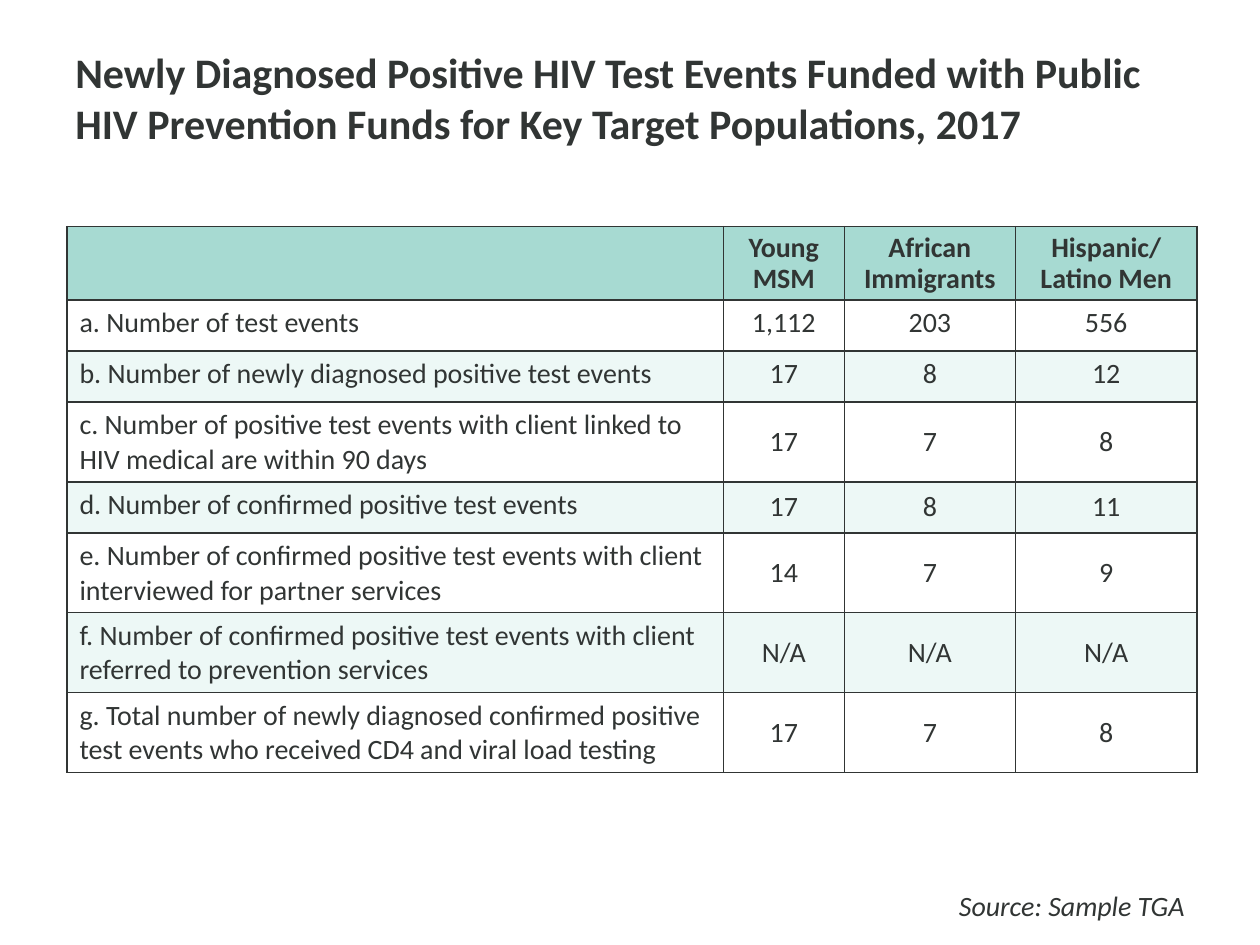
import pptx
import pptx.util
import pptx.dml.color
import pptx.enum.text
import pptx.oxml
import pptx.oxml.ns
from pptx.util import Cm

INK = pptx.dml.color.RGBColor(0x31, 0x35, 0x34)
HEADER_FILL = pptx.dml.color.RGBColor(0xA7, 0xDA, 0xD2)
BAND_FILL = pptx.dml.color.RGBColor(0xED, 0xF8, 0xF6)
WHITE = pptx.dml.color.RGBColor(0xFF, 0xFF, 0xFF)
FONT = "Calibri"
ALIGN = pptx.enum.text.PP_ALIGN
ANCHOR = pptx.enum.text.MSO_ANCHOR

TITLE = ("Newly Diagnosed Positive HIV Test Events Funded with Public "
         "HIV Prevention Funds for Key Target Populations, 2017")
COLUMN_WIDTHS = [13.23, 2.44, 3.45, 3.66]
ROW_HEIGHT = 1.03
FIRST_CENTRED_ROW = 3  # values sit mid-height from row c onwards
ROWS = [
    ["", "Young MSM", "African Immigrants", "Hispanic/\nLatino Men"],
    ["a. Number of test events", "1,112", "203", "556"],
    ["b. Number of newly diagnosed positive test events", "17", "8", "12"],
    ["c. Number of positive test events with client linked to "
     "HIV medical are within 90 days", "17", "7", "8"],
    ["d. Number of confirmed positive test events", "17", "8", "11"],
    ["e. Number of confirmed positive test events with client "
     "interviewed for partner services", "14", "7", "9"],
    ["f. Number of confirmed positive test events with client "
     "referred to prevention services", "N/A", "N/A", "N/A"],
    ["g. Total number of newly diagnosed confirmed positive "
     "test events who received CD4 and viral load testing", "17", "7", "8"],
]


def write_text(tf, text, size, bold=False, italic=False,
               align=ALIGN.LEFT, spacing=None):
    tf.text = text
    tf.word_wrap = True
    for p in tf.paragraphs:
        p.alignment = align
        p.line_spacing = spacing
        for r in p.runs:
            r.font.name = FONT
            r.font.size = pptx.util.Pt(size)
            r.font.bold = bold
            r.font.italic = italic
            r.font.color.rgb = INK


def add_text(s, left, top, width, height, text, size, **style):
    sp = s.shapes.add_textbox(Cm(left), Cm(top), Cm(width), Cm(height))
    write_text(sp.text_frame, text, size, **style)


def set_borders(cell):
    tc_pr = cell._tc.get_or_add_tcPr()
    for i, side in enumerate(("lnL", "lnR", "lnT", "lnB")):
        line = pptx.oxml.parse_xml(
            f'<a:{side} {pptx.oxml.ns.nsdecls("a")} w="12700"><a:solidFill>'
            f'<a:srgbClr val="{INK}"/></a:solidFill></a:{side}>')
        tc_pr.insert(i, line)


def fill_cell(cell, text, row, col):
    header = row == 0
    write_text(cell.text_frame, text, 16, bold=header,
               align=ALIGN.CENTER if col else ALIGN.LEFT,
               spacing=0.9 if header else None)
    if col and row >= FIRST_CENTRED_ROW:
        cell.vertical_anchor = ANCHOR.MIDDLE
    cell.fill.solid()
    cell.fill.fore_color.rgb = (
        HEADER_FILL if header else WHITE if row % 2 else BAND_FILL)
    set_borders(cell)


def add_results_table(s, left, top):
    table = s.shapes.add_table(
        len(ROWS), len(COLUMN_WIDTHS), Cm(left), Cm(top),
        Cm(sum(COLUMN_WIDTHS)), Cm(ROW_HEIGHT * len(ROWS))).table
    for column, width in zip(table.columns, COLUMN_WIDTHS):
        column.width = Cm(width)
    for i, texts in enumerate(ROWS):
        table.rows[i].height = Cm(ROW_HEIGHT)
        for j, text in enumerate(texts):
            fill_cell(table.cell(i, j), text, i, j)


def main():
    prs = pptx.Presentation()
    prs.slide_width, prs.slide_height = Cm(25.4), Cm(19.05)
    s = prs.slides.add_slide(prs.slide_layouts[6])

    # Title
    add_text(s, 1.27, 0.82, 22.86, 3.18, TITLE, 24, bold=True)
    # Test events by target population
    add_results_table(s, 1.35, 4.57)
    # Source line
    add_text(s, 1.27, 17.78, 22.86, 0.94, "Source: Sample TGA", 16,
             italic=True, align=ALIGN.RIGHT)

    prs.save("out.pptx")


if __name__ == "__main__":
    main()
